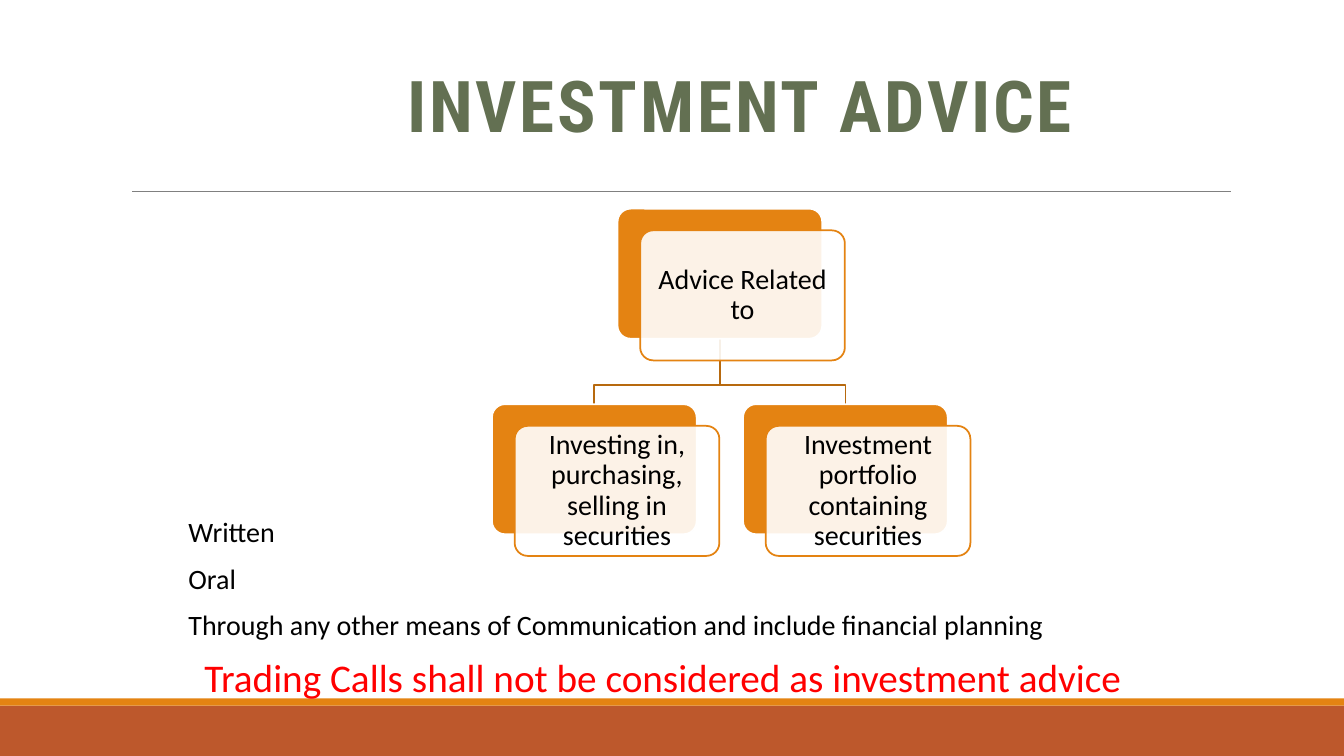
"""Builds the Investment Advice slide: a small card tree with notes below."""
from collections import namedtuple

from lxml import etree
from pptx import Presentation
from pptx.dml.color import RGBColor
from pptx.enum.shapes import MSO_CONNECTOR, MSO_SHAPE
from pptx.enum.text import MSO_ANCHOR, PP_ALIGN
from pptx.oxml.ns import qn
from pptx.util import Inches, Pt

RECT, ROUND = MSO_SHAPE.RECTANGLE, MSO_SHAPE.ROUNDED_RECTANGLE
STRAIGHT = MSO_CONNECTOR.STRAIGHT
TOP, MIDDLE, BOTTOM = MSO_ANCHOR.TOP, MSO_ANCHOR.MIDDLE, MSO_ANCHOR.BOTTOM
LEFT, CENTER = PP_ALIGN.LEFT, PP_ALIGN.CENTER

TITLE = "INVESTMENT ADVICE"
ROOT = "Advice Related to"
BRANCHES = [
    "Investing in, purchasing, selling in securities",
    "Investment portfolio containing securities",
]
FORMS = [
    "Written",
    "Oral",
    "Through any other means of Communication and include financial planning",
]
WARNING = "Trading Calls shall not be considered as investment advice"

Theme = namedtuple("Theme", "accent footer branch rule title text warning paper "
                            "heading_font body_font title_size body_size warning_size")
THEME = Theme("E48312", "BD582C", "B7690E", "808080", "637052", "000000", "FF0000",
              "FFFFFF", "Roboto Condensed", "Calibri", 51, 20, 28)

W, H = 13.33, 7.5
CARD_W, CARD_H = 2.03, 1.29
SHIFT_X, SHIFT_Y = 0.225, 0.215
PITCH_X, PITCH_Y = 2.49, 1.94
TREE_X, TREE_Y = 7.14, 2.07
BEND = 0.71

prs = Presentation()
prs.slide_width, prs.slide_height = Inches(W), Inches(H)
s = prs.slides.add_slide(prs.slide_layouts[6])


def rgb(color):
    return RGBColor.from_string(color)


def block(kind, x, y, w, h, fill, line=None):
    sp = s.shapes.add_shape(kind, Inches(x), Inches(y), Inches(w), Inches(h))
    sp.shadow.inherit = False
    sp.fill.solid()
    sp.fill.fore_color.rgb = rgb(fill)
    if line:
        sp.line.color.rgb = rgb(line)
        sp.line.width = Pt(1.25)
    else:
        sp.line.fill.background()
    return sp


def write(sp, lines, size, color, font=THEME.body_font, bold=False, align=LEFT,
          anchor=MIDDLE, insets=(0.1, 0.05), spacing=1.0, before=0, after=0):
    tf = sp.text_frame
    tf.word_wrap = True
    tf.vertical_anchor = anchor
    tf.margin_left = tf.margin_right = Inches(insets[0])
    tf.margin_top = tf.margin_bottom = Inches(insets[1])
    tf.text = "\n".join(lines)
    for p in tf.paragraphs:
        p.alignment, p.line_spacing = align, spacing
        p.space_before, p.space_after = Pt(before), Pt(after)
        for r in p.runs:
            r.font.name, r.font.size, r.font.bold = font, Pt(size), bold
            r.font.color.rgb = rgb(color)
    return tf


def text_box(x, y, w, h, *args, **style):
    sp = s.shapes.add_textbox(Inches(x), Inches(y), Inches(w), Inches(h))
    return write(sp, *args, **style)


def card(center, top, label):
    x = center - CARD_W / 2
    back = block(ROUND, x, top, CARD_W, CARD_H, THEME.accent, THEME.paper)
    front = block(ROUND, x + SHIFT_X, top + SHIFT_Y, CARD_W, CARD_H,
                  THEME.paper, THEME.accent)
    for sp in (back, front):
        sp.adjustments[0] = 0.1
    color = front.fill._xPr.find(qn("a:solidFill"))[0]
    etree.SubElement(color, qn("a:alpha"), val="90000")
    write(front, [label], THEME.body_size, THEME.text, align=CENTER,
          insets=(0.08, 0.08), spacing=0.9)


def branch(center):
    start, end = TREE_Y + CARD_H, TREE_Y + PITCH_Y
    bend = start + BEND * (end - start)
    route = [(TREE_X, start), (TREE_X, bend), (center, bend), (center, end)]
    points = [(Inches(x), Inches(y)) for x, y in route]
    fb = s.shapes.build_freeform(*points[0])
    fb.add_line_segments(points[1:], close=False)
    sp = fb.convert_to_shape()
    sp.shadow.inherit = False
    sp.fill.background()
    sp.line.color.rgb = rgb(THEME.branch)
    sp.line.width = Pt(1.25)


block(RECT, 0, 7, W, 0.5, THEME.footer)
block(RECT, 0, 6.93, W, 0.07, THEME.accent)
rule = s.shapes.add_connector(STRAIGHT, Inches(1.31), Inches(1.9),
                              Inches(12.21), Inches(1.9))
rule.line.color.rgb = rgb(THEME.rule)
rule.line.width = Pt(0.5)
etree.SubElement(rule._element.spPr, qn("a:effectLst"))

centers = [TREE_X + (i - (len(BRANCHES) - 1) / 2) * PITCH_X
           for i in range(len(BRANCHES))]
for center in reversed(centers):
    branch(center)
card(TREE_X, TREE_Y, ROOT)
for center, label in zip(centers, BRANCHES):
    card(center, TREE_Y + PITCH_Y, label)

title = text_box(1.34, 0.55, 12, 0.96, [TITLE], THEME.title_size, THEME.title,
                 font=THEME.heading_font, bold=True, align=CENTER,
                 anchor=BOTTOM, spacing=0.85)
title.paragraphs[0].runs[0]._r.get_or_add_rPr().set("spc", "200")
text_box(1.77, 5.12, 10.96, 1.38, FORMS, THEME.body_size, THEME.text,
         anchor=TOP, spacing=0.8, before=12, after=2)
text_box(1.93, 6.25, 10.96, 0.93, [WARNING], THEME.warning_size, THEME.warning,
         before=5.6, after=6)

prs.save("out.pptx")
